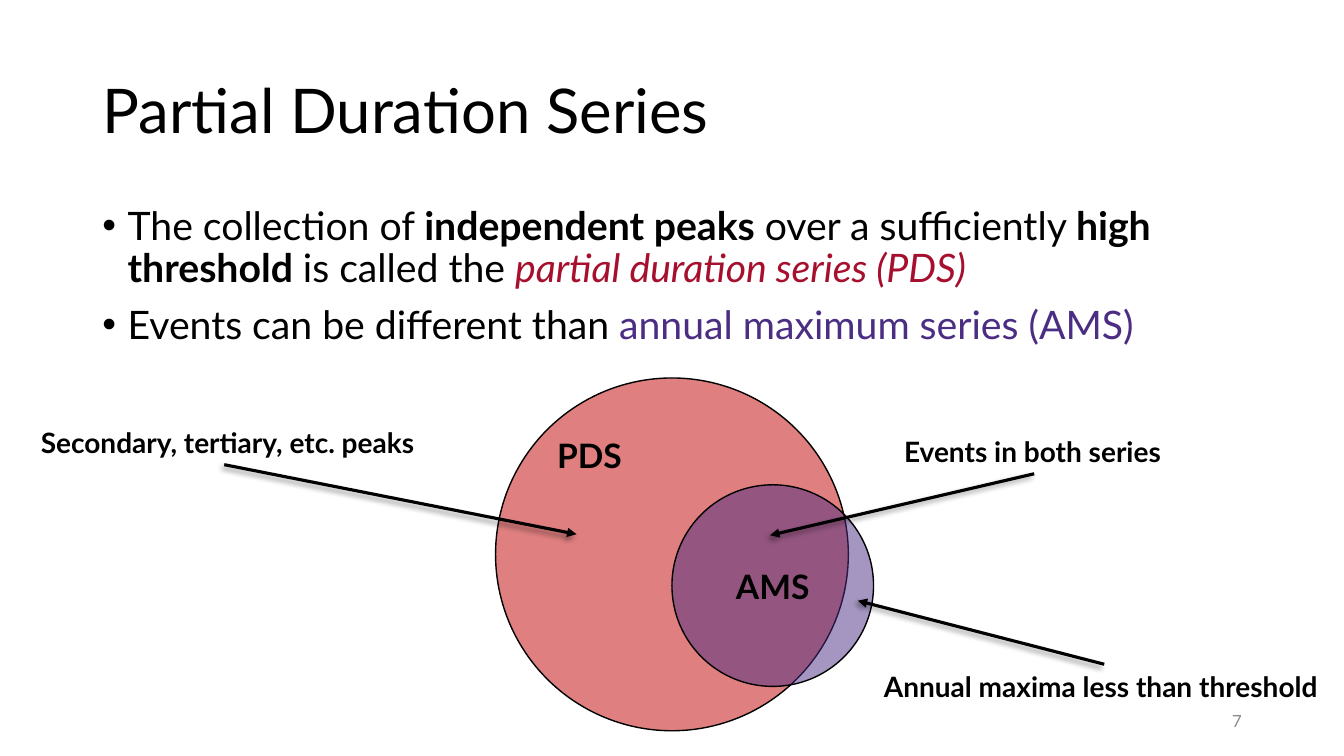
from lxml import etree
from pptx import Presentation
from pptx.dml.color import RGBColor
from pptx.enum.shapes import MSO_CONNECTOR, MSO_SHAPE
from pptx.enum.text import MSO_ANCHOR, MSO_AUTO_SIZE, PP_ALIGN
from pptx.oxml.ns import qn
from pptx.util import Inches, Pt

LEFT, CENTER, RIGHT = PP_ALIGN.LEFT, PP_ALIGN.CENTER, PP_ALIGN.RIGHT
TOP, MIDDLE = MSO_ANCHOR.TOP, MSO_ANCHOR.MIDDLE
FIT_SHAPE, NO_FIT = MSO_AUTO_SIZE.SHAPE_TO_FIT_TEXT, MSO_AUTO_SIZE.NONE
OVAL, STRAIGHT = MSO_SHAPE.OVAL, MSO_CONNECTOR.STRAIGHT
TOP_SIDE, BOTTOM_SIDE = 0, 2

COLORS = {"ink": "000000", "pds": "C00000", "pds_term": "A60F2D",
          "ams": "4B2E83", "number": "8C8C8C"}
FONT = "Lato"
CELL = Inches(1 / 12)  # the slide is a grid of 160 columns by 90 rows


def cells(*counts):
    return [round(count * CELL) for count in counts]


def color(name):
    return RGBColor.from_string(COLORS[name])


class SlideBuilder:
    def __init__(self, presentation):
        layout = presentation.slide_layouts[1]
        self.slide = presentation.slides.add_slide(layout)
        self.shapes = self.slide.shapes

    def add_run(self, paragraph, text, size, ink="ink", bold=False, italic=False):
        run = paragraph.add_run()
        run.text = text
        font = run.font
        font.name, font.size = FONT, Pt(size)
        font.bold, font.italic = bold, italic
        font.color.rgb = color(ink)

    def place(self, shape, area):
        shape.left, shape.top, shape.width, shape.height = cells(*area)

    def title(self, text, area):
        heading = self.shapes.title
        self.place(heading, area)
        heading.text_frame.vertical_anchor = MIDDLE
        heading.text_frame.auto_size = NO_FIT
        paragraph = heading.text_frame.paragraphs[0]
        paragraph.alignment, paragraph.line_spacing = LEFT, 0.9
        self.add_run(paragraph, text, 44)

    def bullets(self, items, area):
        body = self.slide.placeholders[1]
        self.place(body, area)
        frame = body.text_frame
        frame.auto_size = NO_FIT
        for index, runs in enumerate(items):
            paragraph = frame.add_paragraph() if index else frame.paragraphs[0]
            properties = paragraph._p.get_or_add_pPr()
            properties.set("marL", str(Inches(0.25)))
            properties.set("indent", str(-Inches(0.25)))
            etree.SubElement(properties, qn("a:buFont"), typeface="Arial")
            etree.SubElement(properties, qn("a:buChar"), char="•")
            paragraph.line_spacing = 0.9
            paragraph.space_before = Pt(10 if index else 0)
            for text, style in runs:
                self.add_run(paragraph, text, 28, **style)

    def circle(self, text, area, fill, align, anchor):
        disc = self.shapes.add_shape(OVAL, *cells(*area))
        disc.shadow.inherit = False
        disc.fill.solid()
        disc.fill.fore_color.rgb = color(fill)
        tint = disc._element.spPr.find(qn("a:solidFill"))[0]
        etree.SubElement(tint, qn("a:alpha"), val="50000")
        disc.line.color.rgb, disc.line.width = color("ink"), Pt(1)
        disc.text_frame.vertical_anchor = anchor
        paragraph = disc.text_frame.paragraphs[0]
        paragraph.alignment = align
        self.add_run(paragraph, text, 24, bold=True)

    def label(self, text, area, size=20, ink="ink", bold=True, align=LEFT,
              anchor=TOP, wrap=True, fit=FIT_SHAPE):
        box = self.shapes.add_textbox(*cells(*area))
        frame = box.text_frame
        frame.word_wrap, frame.auto_size = wrap, fit
        frame.vertical_anchor = anchor
        paragraph = frame.paragraphs[0]
        paragraph.alignment = align
        self.add_run(paragraph, text, size, ink, bold)
        return box

    def arrow(self, source, side, target):
        pointer = self.shapes.add_connector(STRAIGHT, 0, 0, *cells(*target))
        pointer.begin_connect(source, side)
        pointer.line.color.rgb, pointer.line.width = color("ink"), Pt(2.25)
        etree.SubElement(pointer.line._get_or_add_ln(), qn("a:tailEnd"),
                         type="triangle")
        effects = etree.SubElement(pointer._element.spPr, qn("a:effectLst"))
        shadow = etree.SubElement(
            effects, qn("a:outerShdw"), blurRad=str(Pt(4)), dist=str(Pt(3)),
            dir=str(135 * 60000), algn="tr", rotWithShape="0")
        shade = etree.SubElement(shadow, qn("a:srgbClr"), val=COLORS["ink"])
        etree.SubElement(shade, qn("a:alpha"), val="40000")


def main():
    presentation = Presentation()
    presentation.slide_width, presentation.slide_height = cells(160, 90)
    page = SlideBuilder(presentation)

    # Title and definitions
    page.title("Partial Duration Series", (11, 4.8, 138, 17.4))
    page.bullets([
        [("The collection of ", {}),
         ("independent peaks", {"bold": True}),
         (" over a sufficiently ", {}),
         ("high threshold", {"bold": True}),
         (" is called the ", {}),
         ("partial duration series (PDS)", {"ink": "pds_term", "italic": True})],
        [("Events can be different than ", {}),
         ("annual maximum series (AMS)", {"ink": "ams"})],
    ], (11, 24, 138, 57.12))

    # Overlapping series
    page.circle("PDS", (59, 45, 42, 42), "pds", LEFT, TOP)
    page.circle("AMS", (80, 57.72, 24, 24), "ams", CENTER, MIDDLE)

    # Callouts: text, area, alignment, wrap, side the arrow leaves, arrow tip
    callouts = [
        ("Secondary, tertiary, etc. peaks", (2.88, 50.04, 47.64, 5.28),
         RIGHT, False, BOTTOM_SIDE, (68.64, 63.6)),
        ("Annual maxima less than threshold", (104.04, 79.08, 54.84, 5.28),
         LEFT, True, TOP_SIDE, (102.12, 71.52)),
        ("Events in both series", (106.44, 51.12, 33.36, 5.28),
         LEFT, False, BOTTOM_SIDE, (91.68, 63.72)),
    ]
    for text, area, align, wrap, side, tip in callouts:
        callout = page.label(text, area, align=align, wrap=wrap)
        page.arrow(callout, side, tip)

    # Slide number
    page.label("7", (113.04, 83.4, 36, 4.8), size=12, ink="number", bold=False,
               align=RIGHT, anchor=MIDDLE, fit=NO_FIT)

    presentation.save("out.pptx")


if __name__ == "__main__":
    main()
